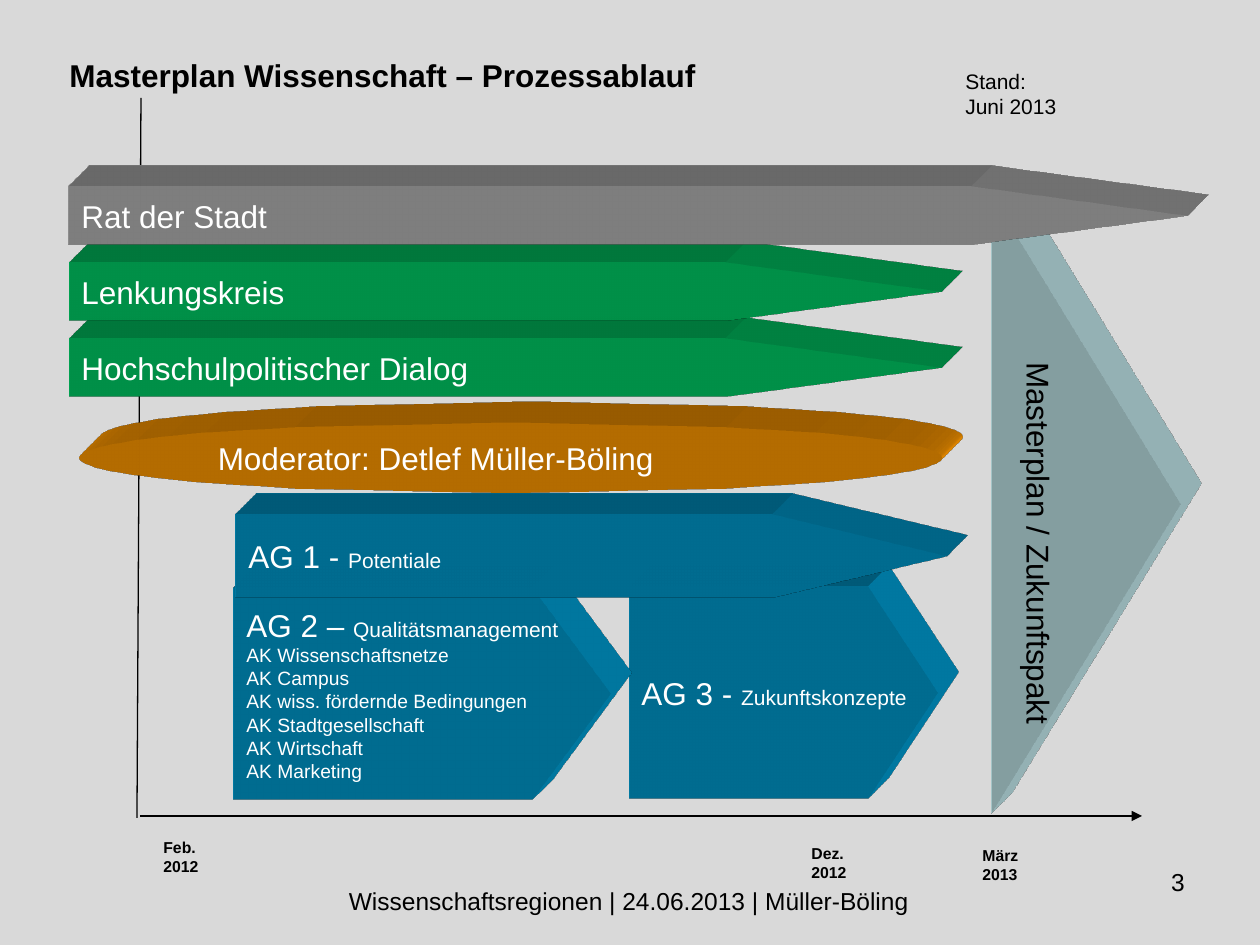
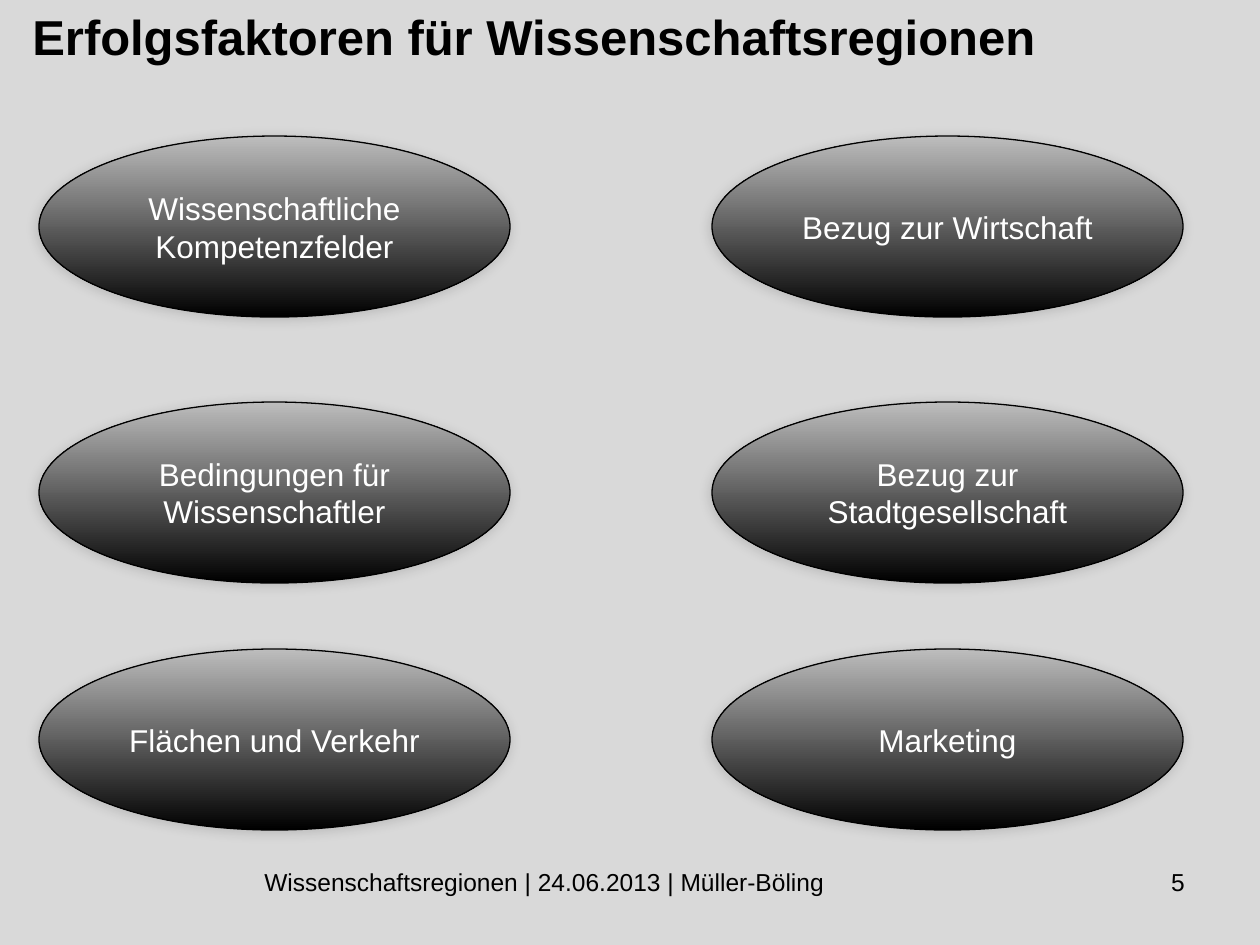
from dataclasses import dataclass

from lxml import etree
from pptx import Presentation
from pptx.dml.color import RGBColor
from pptx.enum import shapes, text
from pptx.util import Emu, Pt

PX = 914400 / 126
A = "http://schemas.openxmlformats.org/drawingml/2006/main"
SHAPE = shapes.MSO_SHAPE
ALIGN = text.PP_ALIGN
ANCHOR = text.MSO_ANCHOR


@dataclass(frozen=True)
class Theme:
    font: str = "Arial"
    page: str = "D9D9D9"
    ink: str = "000000"
    white: str = "FFFFFF"
    council: str = "B2B2B2"
    dialog: str = "00CC66"
    moderator: str = "FF9900"
    group: str = "0099CC"
    goal: str = "BBE0E3"
    sheen: str = "BDBDBD"
    headline: int = 28
    body: int = 18
    footer: int = 14
    detail: int = 12
    topic: int = 11
    date: int = 9
    rule: float = 0.75


THEME = Theme()


@dataclass(frozen=True)
class Rect:
    left: int
    top: int
    width: int
    height: int

    def emu(self) -> list[Emu]:
        return [px(v) for v in (self.left, self.top, self.width, self.height)]


@dataclass(frozen=True)
class Span:
    text: str
    size: int = THEME.body


Lines = list[list[Span]]


@dataclass(frozen=True)
class Block:
    """An extruded process element."""
    rect: Rect
    color: str
    lines: Lines
    kind: SHAPE = SHAPE.PENTAGON
    adjust: float | None = None
    ink: str = THEME.white
    rotation: int = 0


def px(value: int) -> Emu:
    return Emu(round(value * PX))


def rgb(value: str) -> RGBColor:
    return RGBColor.from_string(value)


def append_xml(parent, xml: str) -> None:
    parent.append(etree.fromstring(xml.replace(">", f' xmlns:a="{A}">', 1)))


# Text
def write(frame, lines: Lines, *, color: str = THEME.ink, bold: bool = False,
          align=ALIGN.LEFT, anchor=ANCHOR.TOP, wrap: bool = True) -> None:
    frame.word_wrap = wrap
    frame.vertical_anchor = anchor
    for index, line in enumerate(lines):
        para = frame.paragraphs[0] if index == 0 else frame.add_paragraph()
        para.alignment = align
        for span in line:
            for part_index, part in enumerate(span.text.split("\n")):
                if part_index:
                    para.add_line_break()
                run = para.add_run()
                run.text = part
                run.font.name = THEME.font
                run.font.size = Pt(span.size)
                run.font.bold = bold
                run.font.color.rgb = rgb(color)


def add_text(page, rect: Rect, content: str, *, size: int, bold: bool = False,
             align=ALIGN.LEFT) -> None:
    box = page.shapes.add_textbox(*rect.emu())
    write(box.text_frame, [[Span(content, size)]], bold=bold, align=align)


# Shapes
def add_block(page, block: Block) -> None:
    shape = page.shapes.add_shape(block.kind, *block.rect.emu())
    shape.rotation = block.rotation
    if block.adjust is not None:
        shape.adjustments[0] = block.adjust
    shape.fill.solid()
    shape.fill.fore_color.rgb = rgb(block.color)
    shape.line.fill.background()
    shape.shadow.inherit = False
    properties = shape._element.spPr
    append_xml(properties,
               '<a:scene3d><a:camera prst="legacyObliqueTopRight"/>'
               '<a:lightRig rig="legacyFlat3" dir="b"/></a:scene3d>')
    append_xml(properties,
               '<a:sp3d extrusionH="430200" prstMaterial="legacyMatte">'
               '<a:bevelT w="13500" h="13500" prst="angle"/>'
               '<a:bevelB w="13500" h="13500" prst="angle"/>'
               f'<a:extrusionClr><a:srgbClr val="{block.color}"/></a:extrusionClr></a:sp3d>')
    write(shape.text_frame, block.lines, color=block.ink, anchor=ANCHOR.MIDDLE, wrap=False)


def add_axis(page, start: tuple[int, int], end: tuple[int, int], *, arrow: bool = False) -> None:
    axis = page.shapes.add_connector(shapes.MSO_CONNECTOR.STRAIGHT,
                                     *(px(v) for v in start + end))
    axis.line.color.rgb = rgb(THEME.ink)
    axis.line.width = Pt(THEME.rule)
    if arrow:
        append_xml(axis.line._get_or_add_ln(), '<a:tailEnd type="triangle"></a:tailEnd>')
    append_xml(axis._element.spPr, "<a:effectLst></a:effectLst>")


def add_factor(page, rect: Rect, label: str) -> None:
    oval = page.shapes.add_shape(SHAPE.OVAL, *rect.emu())
    oval.fill.gradient()
    oval.fill.gradient_angle = 90
    for stop, color in zip(oval.fill.gradient_stops, (THEME.ink, THEME.sheen)):
        stop.color.rgb = rgb(color)
    for stop, position in zip(oval.fill.gradient_stops, (0, 1)):
        stop.position = position
    oval.line.color.rgb = rgb(THEME.ink)
    oval.line.width = Pt(THEME.rule)
    oval.shadow.inherit = False
    append_xml(oval._element.spPr.find(f"{{{A}}}effectLst"),
               '<a:outerShdw blurRad="88900" dist="12700" dir="8100000" rotWithShape="0">'
               f'<a:srgbClr val="{THEME.ink}"><a:alpha val="15000"/></a:srgbClr></a:outerShdw>')
    write(oval.text_frame, [[Span(label)]], color=THEME.white,
          align=ALIGN.CENTER, anchor=ANCHOR.MIDDLE)


# Shared page frame
def add_page(deck):
    page = deck.slides.add_slide(deck.slide_layouts[6])
    page.background.fill.solid()
    page.background.fill.fore_color.rgb = rgb(THEME.page)
    return page


def add_footer(page, rect: Rect, number: int) -> None:
    add_text(page, rect, "Wissenschaftsregionen | 24.06.2013 | Müller-Böling",
             size=THEME.footer, align=ALIGN.CENTER)
    add_text(page, Rect(903, 861, 294, 66), str(number), size=THEME.footer, align=ALIGN.RIGHT)


def build_process(deck) -> None:
    page = add_page(deck)

    # Working groups
    topics = ["Wissenschaftsnetze", "Campus", "wiss. fördernde Bedingungen",
              "Stadtgesellschaft", "Wirtschaft", "Marketing"]
    quality = [[Span("AG 2 – "), Span("Qualitätsmanagement", THEME.detail)]]
    quality += [[Span(f"AK {topic}", THEME.topic)] for topic in topics]
    groups = [
        Block(Rect(629, 587, 309, 212), THEME.group,
              [[Span("AG 3 - "), Span("Zukunftskonzepte", THEME.detail)]], adjust=0.33),
        Block(Rect(234, 588, 377, 212), THEME.group, quality, adjust=0.37),
        Block(Rect(236, 514, 711, 84), THEME.group,
              [[Span("AG 1 - "), Span("Potentiale", THEME.detail)]], adjust=2.08),
    ]
    for group in groups:
        add_block(page, group)

    # Time axes and dates
    add_axis(page, (141, 98), (137, 818))
    add_axis(page, (140, 816), (1142, 816), arrow=True)
    for left, top, date in [(151, 832, "Feb.\n2012"), (799, 838, "Dez.\n2012"),
                            (970, 840, "März\n2013")]:
        add_text(page, Rect(left, top, 69, 50), date, size=THEME.date, bold=True)

    # Goal and moderator
    add_block(page, Block(Rect(777, 410, 619, 189), THEME.goal,
                          [[Span("Masterplan / Zukunftspakt")]],
                          SHAPE.ISOSCELES_TRIANGLE, 0.5, THEME.ink, 90))
    add_block(page, Block(Rect(79, 422, 863, 71), THEME.moderator,
                          [[Span("Moderator: Detlef Müller-Böling")]], SHAPE.OVAL))

    # Steering bodies, stacked from the lowest up
    bodies = [("Hochschulpolitischer Dialog", 873, THEME.dialog),
              ("Lenkungskreis", 873, THEME.dialog),
              ("Rat der Stadt", 1119, THEME.council)]
    for row, (label, width, color) in enumerate(bodies):
        add_block(page, Block(Rect(69, 338 - 76 * row, width, 59), color,
                              [[Span(label)]], adjust=3.67))

    # Title, status and footer
    add_text(page, Rect(57, 50, 919, 50), "Masterplan Wissenschaft – Prozessablauf",
             size=THEME.body, bold=True)
    add_text(page, Rect(953, 62, 213, 63), "Stand:\nJuni 2013", size=THEME.detail)
    add_footer(page, Rect(292, 880, 674, 66), 3)


def build_factors(deck) -> None:
    page = add_page(deck)
    add_footer(page, Rect(186, 861, 717, 66), 5)
    add_text(page, Rect(20, 0, 1212, 88), "Erfolgsfaktoren für Wissenschaftsregionen",
             size=THEME.headline, bold=True)

    # Two columns of success factors
    rows = [(136, "Wissenschaftliche Kompetenzfelder", "Bezug zur Wirtschaft"),
            (402, "Bedingungen für Wissenschaftler", "Bezug zur Stadtgesellschaft"),
            (649, "Flächen und Verkehr", "Marketing")]
    for top, *labels in rows:
        for left, label in zip((39, 712), labels):
            add_factor(page, Rect(left, top, 471, 181), label)


def main() -> None:
    deck = Presentation()
    deck.slide_width, deck.slide_height = px(1260), px(945)
    build_process(deck)
    build_factors(deck)
    deck.save("out.pptx")


if __name__ == "__main__":
    main()
